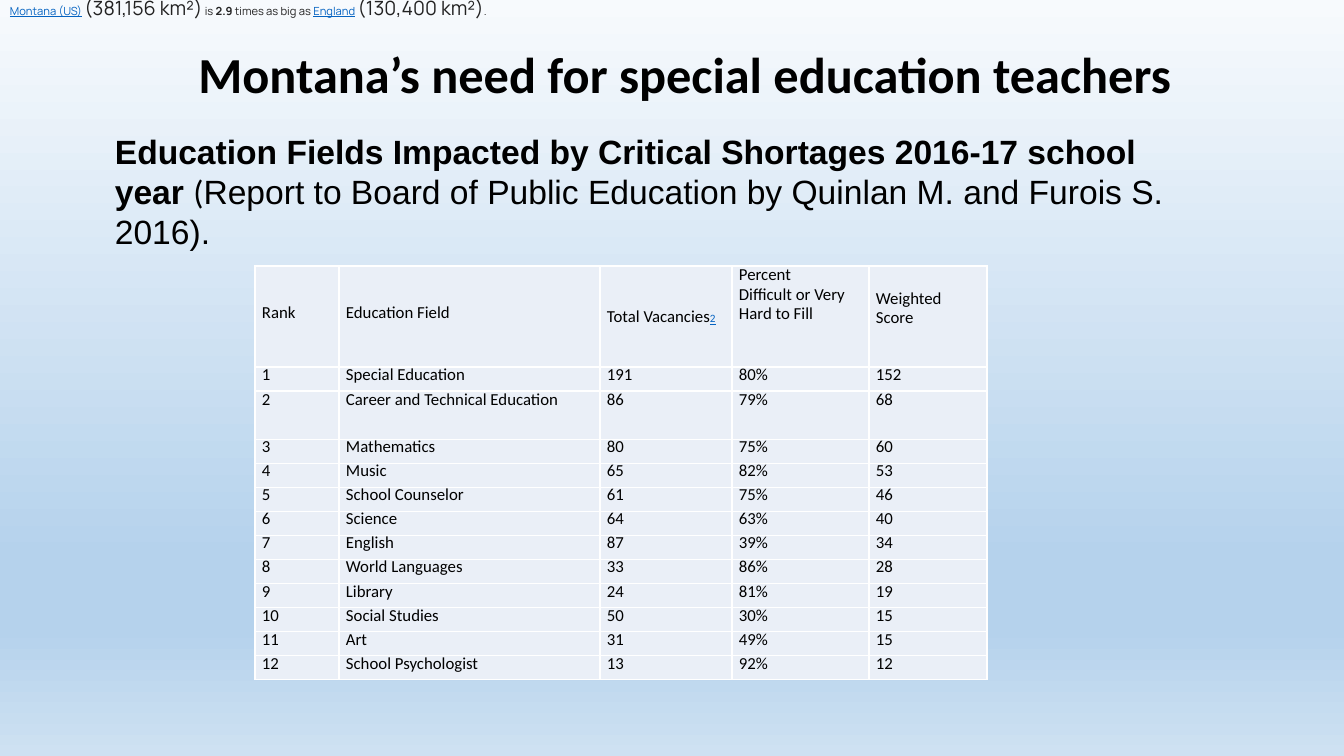
from lxml import etree
from pptx import Presentation
from pptx import util as u
from pptx.dml.color import RGBColor
from pptx.enum import text
from pptx.oxml.ns import qn

SCALE = 914400 / 100.8  # EMU in one px


def px(length):
    return u.Emu(round(length * SCALE))


def add_run(paragraph, words, color="000000", **formats):
    run = paragraph.add_run()
    run.text = words
    run.font.color.rgb = RGBColor.from_string(color)
    for name, value in formats.items():
        setattr(run.font, name, value)


presentation = Presentation()
presentation.slide_width, presentation.slide_height = px(1344), px(756)
slide = presentation.slides.add_slide(presentation.slide_layouts[5])

# Background gradient, from top to bottom
background = slide.background.fill
background.gradient()
background.gradient_angle = 270
stops = slide.element.find(".//" + qn("a:gsLst"))
for stop in list(stops):
    stops.remove(stop)
for position, color in [(0, "F7FAFD"), (74, "B5D2EC"), (83, "B5D2EC"), (100, "CEE1F2")]:
    stop = etree.SubElement(stops, qn("a:gs"), pos=str(position * 1000))
    etree.SubElement(stop, qn("a:srgbClr"), val=color)

# Title
title = slide.shapes.title
title.left, title.top, title.width, title.height = px(118), px(40), px(1134), px(75)
title_frame = title.text_frame
title_frame.auto_size = text.MSO_AUTO_SIZE.NONE
title_frame.vertical_anchor = text.MSO_ANCHOR.MIDDLE
paragraph = title_frame.paragraphs[0]
paragraph.alignment = text.PP_ALIGN.CENTER
paragraph.line_spacing = 0.9
add_run(paragraph, "Montana’s need for special education teachers",
        name="Calibri", size=u.Pt(36), bold=True)

# Size comparison along the top edge
comparison = slide.shapes.add_textbox(0, 0, px(1344), px(50))
frame_formats = {"word_wrap": False, "vertical_anchor": text.MSO_ANCHOR.MIDDLE,
                 "margin_top": 0, "margin_bottom": px(35)}
for name, value in frame_formats.items():
    setattr(comparison.text_frame, name, value)
paragraph = comparison.text_frame.paragraphs[0]
LINK, GREY = "0563C1", "222222"
for words, size, color, bold in [
    ("Montana (US)", 8, LINK, False),
    (" ", 8, GREY, False),
    ("(381,156 km²)", 14, GREY, False),
    (" is ", 8, GREY, False),
    ("2.9", 8, GREY, True),
    (" times as big as ", 8, GREY, False),
    ("England", 8, LINK, False),
    (" ", 8, GREY, False),
    ("(130,400 km²)", 14, GREY, False),
    (".", 8, GREY, False),
]:
    add_run(paragraph, words, color, name="Manrope", size=u.Pt(size),
            bold=bold, underline=color == LINK)

# Vacancy table
header = ["Rank", "Education Field", "Total Vacancies",
          "Percent Difficult or Very Hard to Fill", "Weighted Score"]
fields = [
    ("Special Education", 191, 80, 152),
    ("Career and Technical Education", 86, 79, 68),
    ("Mathematics", 80, 75, 60),
    ("Music", 65, 82, 53),
    ("School Counselor", 61, 75, 46),
    ("Science", 64, 63, 40),
    ("English", 87, 39, 34),
    ("World Languages", 33, 86, 28),
    ("Library", 24, 81, 19),
    ("Social Studies", 50, 30, 15),
    ("Art", 31, 49, 15),
    ("School Psychologist", 13, 92, 12),
]
rows = [header] + [
    [str(rank), field, str(vacancies), f"{percent}%", str(score)]
    for rank, (field, vacancies, percent, score) in enumerate(fields, 1)
]
column_widths = [84, 261, 132, 137, 118]
header_tops = [39, 39, 42, 0, 24]
header_rights = [0, 0, 0, 22, 15]
header_spacings = [13, 13, 13.8, 13.8, 13.5]
row_unit = px(313) // 13  # the second field takes two units

table = slide.shapes.add_table(len(rows), len(header), px(255), px(266),
                               px(sum(column_widths)), px(414)).table
table.first_row = table.horz_banding = False
for column, width in zip(table.columns, column_widths):
    column.width = px(width)

for i, values in enumerate(rows):
    table.rows[i].height = px(101) if i == 0 else row_unit * (2 if i == 2 else 1)
    for j, value in enumerate(values):
        cell = table.cell(i, j)
        cell.margin_left = px(7)
        cell.margin_right = px(header_rights[j] if i == 0 else 0)
        cell.margin_top = px(header_tops[j] if i == 0 else 0)
        cell.margin_bottom = 0
        paragraph = cell.text_frame.paragraphs[0]
        spacing = header_spacings[j] if i == 0 else 13.6 if i == 2 else 12.9
        paragraph.line_spacing = u.Pt(spacing)
        add_run(paragraph, value, name="Calibri", size=u.Pt(12))
        # Borders come before the fill in the cell properties
        properties = cell._tc.get_or_add_tcPr()
        for side in ("lnL", "lnR", "lnT", "lnB"):
            line = etree.SubElement(properties, qn("a:" + side), w=str(u.Pt(1)))
            line_fill = etree.SubElement(line, qn("a:solidFill"))
            etree.SubElement(line_fill, qn("a:srgbClr"), val="FFFFFF")
        cell.fill.solid()
        cell.fill.fore_color.rgb = RGBColor.from_string("EAEFF7")

# Footnote mark after "Total Vacancies"
add_run(table.cell(0, 2).text_frame.paragraphs[0], "2", LINK,
        name="Calibri", size=u.Pt(8), underline=True)

# Subtitle above the table
subtitle = slide.shapes.add_textbox(px(105), px(125), px(1080), px(132))
subtitle.text_frame.word_wrap = True
subtitle.text_frame.vertical_anchor = text.MSO_ANCHOR.MIDDLE
paragraph = subtitle.text_frame.paragraphs[0]
for words, font, bold in [
    ("Education Fields Impacted by Critical Shortages 2016-17 school year ", "Arial", True),
    ("(", "Calibri", False),
    ("Report to Board of Public Education by Quinlan M. and Furois S. 2016).", "Arial", False),
]:
    add_run(paragraph, words, name=font, size=u.Pt(24), bold=bold)

presentation.save("out.pptx")
